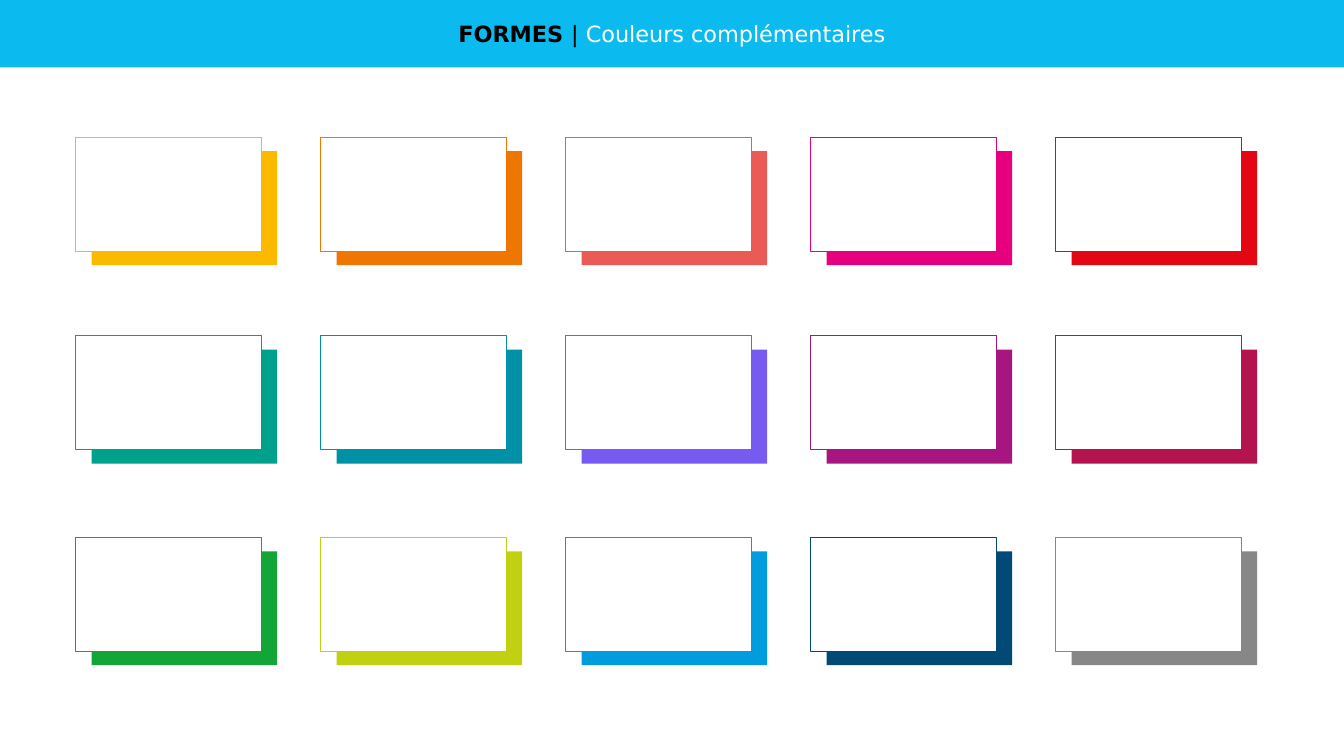
from dataclasses import dataclass

from pptx import Presentation
from pptx.dml.color import RGBColor
from pptx.enum import shapes, text
from pptx.util import Inches, Pt


@dataclass(frozen=True)
class Theme:
    band: str = "0BBBEF"
    dark: str = "000000"
    light: str = "FFFFFF"
    font: str = "DejaVu Sans"
    title_size: float = 16
    outline: float = 0.25


THEME = Theme()
SLIDE_WIDTH, SLIDE_HEIGHT = 13.33, 7.5

CARD_COLOURS = [
    ["FBBA00", "EE7601", "EB5B56", "E6007E", "E30613"],
    ["00A18C", "0091A7", "775BF1", "A71680", "B31450"],
    ["13A538", "C1D112", "009CDD", "004A75", "878787"],
]
ROW_TOPS = [1.36, 3.33, 5.33]
GRID_LEFT, COLUMN_STEP = 0.75, 2.43
CARD_WIDTH, CARD_HEIGHT = 1.84, 1.13
OFFSET_X, OFFSET_Y = 0.16, 0.14


def add_rectangle(parent, left, top, width, height, fill, line=None):
    shape = parent.shapes.add_shape(
        shapes.MSO_SHAPE.RECTANGLE,
        Inches(left), Inches(top), Inches(width), Inches(height))
    shape.shadow.inherit = False
    shape.fill.solid()
    shape.fill.fore_color.rgb = RGBColor.from_string(fill)
    if line:
        shape.line.color.rgb = RGBColor.from_string(line)
        shape.line.width = Pt(THEME.outline)
    else:
        shape.line.fill.background()
    return shape


def add_header(slide, left, top, width, height):
    """Coloured band with the slide title centred in front of it."""
    band = add_rectangle(slide, left, top, width, height, THEME.band)
    title = slide.shapes.title
    title.element.addprevious(band.element)
    title.left, title.top = Inches(left), Inches(top)
    title.width, title.height = Inches(width), Inches(height)

    frame = title.text_frame
    frame.word_wrap = True
    frame.auto_size = text.MSO_AUTO_SIZE.NONE
    frame.vertical_anchor = text.MSO_ANCHOR.MIDDLE
    paragraph = frame.paragraphs[0]
    paragraph.alignment = text.PP_ALIGN.CENTER
    for words, colour, bold in [
        ("FORMES ", THEME.dark, True),
        ("| ", THEME.dark, False),
        ("Couleurs complémentaires", THEME.light, False),
    ]:
        run = paragraph.add_run()
        run.text = words
        run.font.name = THEME.font
        run.font.size = Pt(THEME.title_size)
        run.font.bold = bold
        run.font.color.rgb = RGBColor.from_string(colour)


def add_card(slide, left, top, width, height, colour):
    """White outlined card grouped with an offset block of the same colour."""
    group = slide.shapes.add_group_shape()
    add_rectangle(group, left + OFFSET_X, top + OFFSET_Y, width, height, colour)
    add_rectangle(group, left, top, width, height, THEME.light, colour)


def add_card_grid(slide, left, row_tops):
    for top, colours in zip(row_tops, CARD_COLOURS):
        for column, colour in enumerate(colours):
            add_card(slide, left + column * COLUMN_STEP, top,
                     CARD_WIDTH, CARD_HEIGHT, colour)


def main():
    presentation = Presentation()
    presentation.slide_width = Inches(SLIDE_WIDTH)
    presentation.slide_height = Inches(SLIDE_HEIGHT)
    title_only = presentation.slide_layouts.get_by_name("Title Only")
    slide = presentation.slides.add_slide(title_only)
    add_header(slide, 0, 0, SLIDE_WIDTH, 0.67)
    add_card_grid(slide, GRID_LEFT, ROW_TOPS)
    presentation.save("out.pptx")


if __name__ == "__main__":
    main()
